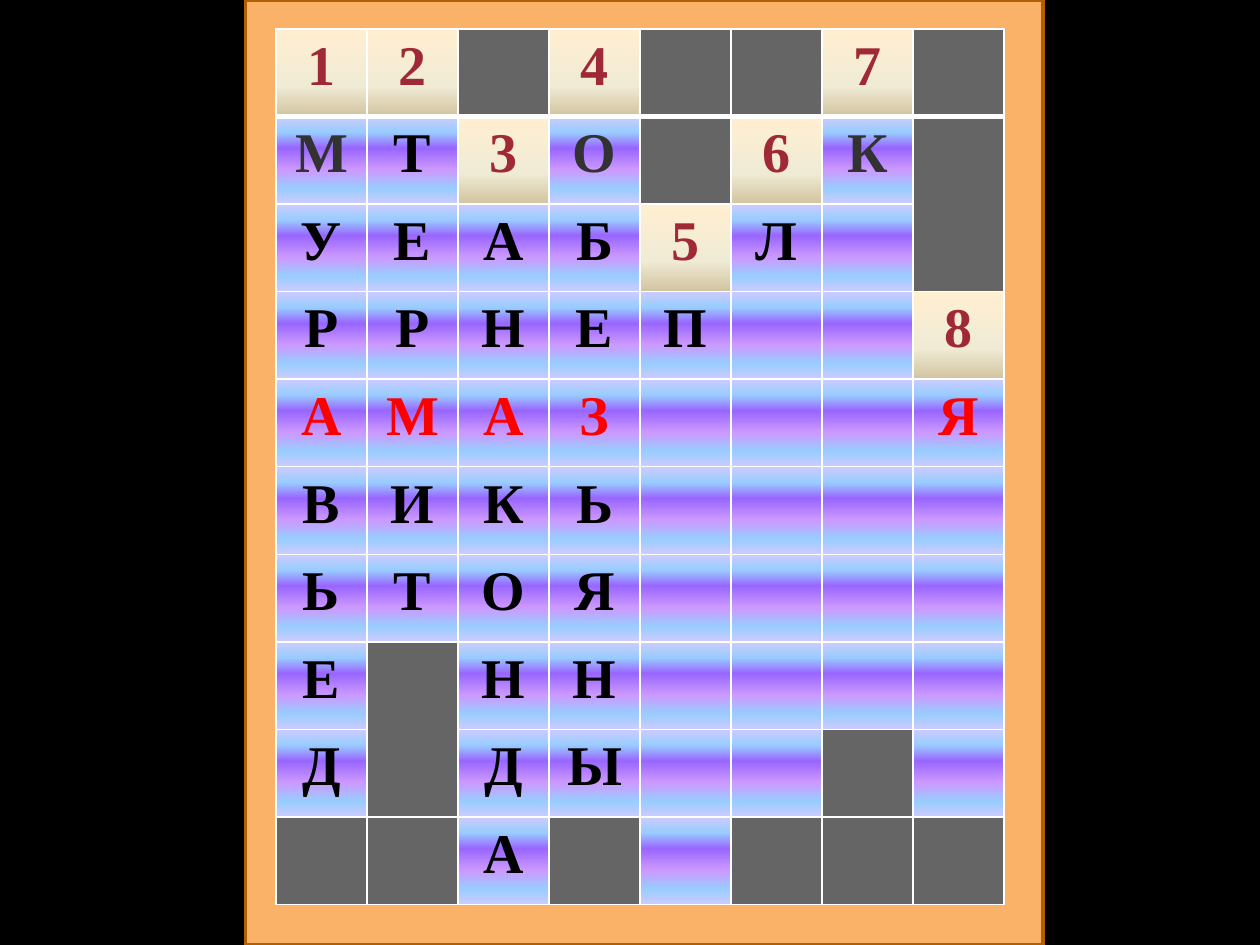
from dataclasses import dataclass
from typing import Optional

from lxml.etree import SubElement
from pptx import Presentation
from pptx.dml.color import RGBColor
from pptx.enum.shapes import MSO_SHAPE as Shape
from pptx.enum.text import PP_ALIGN as Align
from pptx.oxml.ns import qn
from pptx.util import Inches, Pt

COLORS = {
    "background": "000000",
    "frame": "F9B268",
    "frame_line": "B25E07",
    "border": "FFFFFF",
    "blocked": "656565",
    "clue": "9F2936",
    "letter": "000000",
    "soft_letter": "323232",
    "keyword": "FF0000",
}
CLUE_STOPS = ((0, "FFEFD1"), (65, "F0EBD5"), (100, "D1C39F"))
LETTER_STOPS = (
    (0, "CCCCFF"), (18, "99CCFF"), (36, "9966FF"),
    (61, "CC99FF"), (82, "99CCFF"), (100, "CCCCFF"),
)
BLOCKED, EMPTY = "#", "."
CROSSWORD = (
    "12#4##7#",
    "МТ3О#6К#",
    "УЕАБ5Л.#",
    "РРНЕП..8",
    "АМАЗ...Я",
    "ВИКЬ....",
    "ЬТОЯ....",
    "Е#НН....",
    "Д#ДЫ..#.",
    "##А#.###",
)
KEYWORD_ROW = 4
SOFT_LETTERS = {(1, 0), (1, 3), (1, 6)}
TALL_BLOCKS = ((1, 7), (7, 1))


@dataclass(frozen=True)
class Square:
    row: int
    column: int
    mark: str

    @property
    def stops(self) -> Optional[tuple]:
        if self.mark == BLOCKED:
            return None
        return CLUE_STOPS if self.mark.isdigit() else LETTER_STOPS

    @property
    def text(self) -> str:
        return "" if self.mark in (BLOCKED, EMPTY) else self.mark

    @property
    def color(self) -> str:
        if self.mark.isdigit():
            return "clue"
        if self.row == KEYWORD_ROW:
            return "keyword"
        return "soft_letter" if (self.row, self.column) in SOFT_LETTERS else "letter"


def rgb(name: str) -> RGBColor:
    return RGBColor.from_string(COLORS[name])


def write_text(box, text: str, *, size: float, font: str, color: str,
               bold: bool = False, align: Align = Align.CENTER) -> None:
    para = box.text_frame.paragraphs[0]
    para.alignment = align
    span = para.add_run()
    span.text = text
    span.font.size = Pt(size)
    span.font.name = font
    span.font.bold = bold
    span.font.color.rgb = rgb(color)


def add_borders(cell, row: int) -> None:
    properties = cell._tc.get_or_add_tcPr()
    widths = {"lnL": 1, "lnR": 1, "lnT": 3 if row == 1 else 1, "lnB": 3 if row == 0 else 1}
    for side, width in widths.items():
        line = SubElement(properties, qn(f"a:{side}"), w=str(Pt(width)))
        fill = SubElement(line, qn("a:solidFill"))
        SubElement(fill, qn("a:srgbClr"), val=COLORS["border"])


def add_gradient(cell, stops: tuple) -> None:
    gradient = SubElement(cell._tc.get_or_add_tcPr(), qn("a:gradFill"), rotWithShape="1")
    stop_list = SubElement(gradient, qn("a:gsLst"))
    for position, color in stops:
        stop = SubElement(stop_list, qn("a:gs"), pos=str(position * 1000))
        SubElement(stop, qn("a:srgbClr"), val=color)
    SubElement(gradient, qn("a:lin"), ang=str(90 * 60000), scaled="0")


def draw_square(cell, square: Square) -> None:
    add_borders(cell, square.row)
    if square.stops:
        add_gradient(cell, square.stops)
    else:
        cell.fill.solid()
        cell.fill.fore_color.rgb = rgb("blocked")
    if square.text:
        write_text(cell, square.text, size=32, font="Times New Roman",
                   color=square.color, bold=True)


def draw_frame(page) -> None:
    frame = page.shapes.add_shape(
        Shape.FLOWCHART_PROCESS, Inches(1.95), Inches(0), Inches(6.33), Inches(7.5))
    frame.shadow.inherit = False
    frame.fill.solid()
    frame.fill.fore_color.rgb = rgb("frame")
    frame.line.color.rgb = rgb("frame_line")
    frame.line.width = Pt(2)


def draw_crossword(page) -> None:
    table = page.shapes.add_table(
        len(CROSSWORD), len(CROSSWORD[0]),
        Inches(2.19), Inches(0.23), Inches(5.78), Inches(6.95)).table
    table.first_row = False
    table.horz_banding = False
    for row, marks in enumerate(CROSSWORD):
        for column, mark in enumerate(marks):
            draw_square(table.cell(row, column), Square(row, column, mark))
    for row, column in TALL_BLOCKS:
        table.cell(row, column).merge(table.cell(row + 1, column))


def main() -> None:
    deck = Presentation()
    deck.slide_width, deck.slide_height = Inches(10), Inches(7.5)
    page = deck.slides.add_slide(deck.slide_layouts[6])
    page.background.fill.solid()
    page.background.fill.fore_color.rgb = rgb("background")
    draw_frame(page)
    draw_crossword(page)
    deck.save("out.pptx")


if __name__ == "__main__":
    main()
